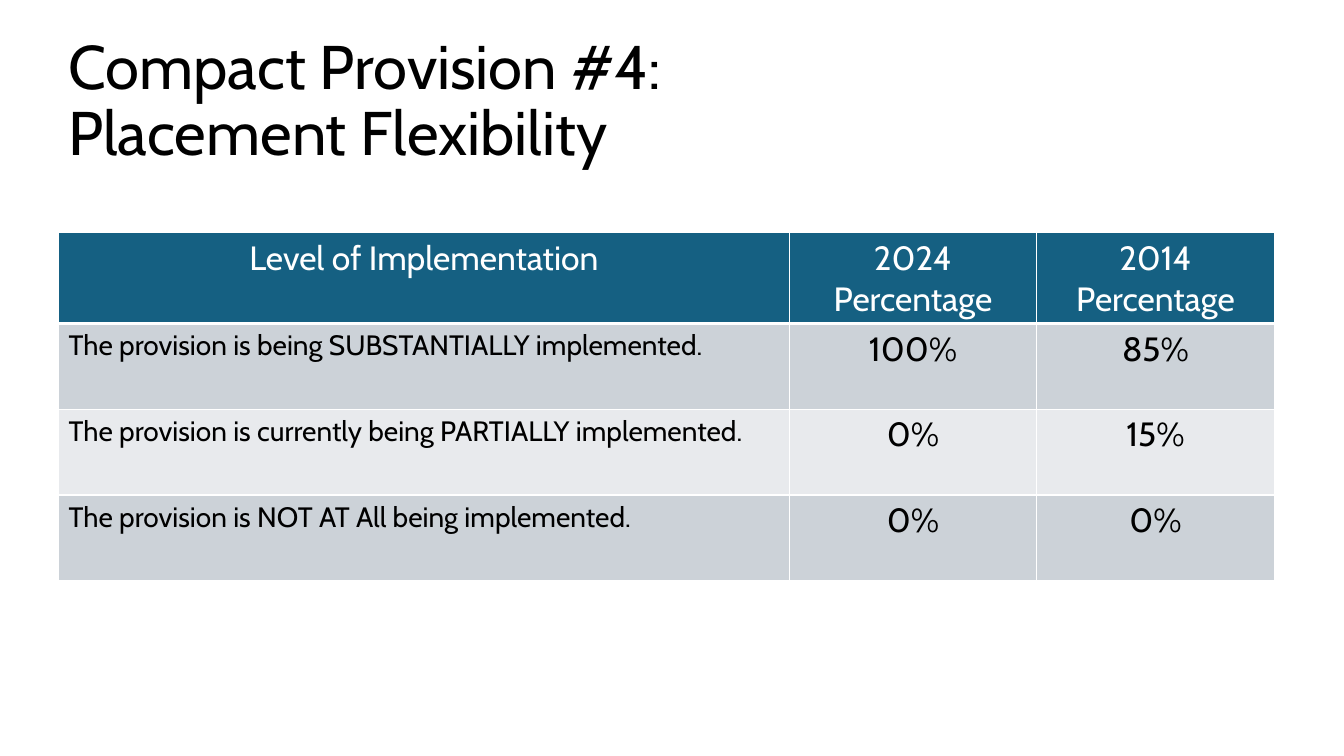
from lxml.etree import SubElement
from pptx import Presentation
from pptx.dml.color import RGBColor
from pptx.enum.text import MSO_ANCHOR, PP_ALIGN
from pptx.oxml.ns import qn
from pptx.util import Inches, Pt

FONT = "Cabin"
COLORS = {
    "text": "000000",
    "header": "156082",
    "odd_row": "CCD2D8",
    "even_row": "E8EAED",
    "white": "FFFFFF",
}
COLUMN_WIDTHS = [7.25, 2.45, 2.36]
ROW_HEIGHTS = [0.9, 0.85, 0.85, 0.85]
LEVELS = [
    ("Level of Implementation", "2024 Percentage", "2014 Percentage"),
    ("The provision is being SUBSTANTIALLY implemented.", "100%", "85%"),
    ("The provision is currently being PARTIALLY implemented.", "0%", "15%"),
    ("The provision is NOT AT All being implemented.", "0%", "0%"),
]


def format_runs(paragraph, size, color):
    for run in paragraph.runs:
        run.font.name = FONT
        run.font.size = Pt(size)
        run.font.bold = False
        run.font.color.rgb = RGBColor.from_string(COLORS[color])


def add_title(slide, text):
    title = slide.shapes.add_textbox(
        Inches(0.58), Inches(0.29), Inches(11.5), Inches(1.45))
    frame = title.text_frame
    frame.word_wrap = True
    frame.vertical_anchor = MSO_ANCHOR.MIDDLE
    heading = frame.paragraphs[0]
    heading.text = text
    heading.line_spacing = 0.9
    format_runs(heading, 44, "text")


def set_borders(cell, bottom_width):
    """Draw white cell borders; they must come before the fill in the XML."""
    properties = cell._tc.get_or_add_tcPr()
    widths = {"a:lnL": 1, "a:lnR": 1, "a:lnT": 1, "a:lnB": bottom_width}
    for side, width in widths.items():
        line = SubElement(properties, qn(side), w=str(Pt(width)))
        fill = SubElement(line, qn("a:solidFill"))
        SubElement(fill, qn("a:srgbClr"), val=COLORS["white"])


def fill_cell(cell, text, row, column):
    is_header = row == 0
    is_label = column == 0 and not is_header
    set_borders(cell, bottom_width=3 if is_header else 1)

    background = "header" if is_header else "odd_row" if row % 2 else "even_row"
    cell.fill.solid()
    cell.fill.fore_color.rgb = RGBColor.from_string(COLORS[background])

    paragraph = cell.text_frame.paragraphs[0]
    paragraph.text = text
    paragraph.alignment = PP_ALIGN.LEFT if is_label else PP_ALIGN.CENTER
    format_runs(paragraph, 20 if is_label else 24,
                "white" if is_header else "text")


def add_levels_table(slide):
    table = slide.shapes.add_table(
        len(LEVELS), len(COLUMN_WIDTHS), Inches(0.58), Inches(2.31),
        Inches(sum(COLUMN_WIDTHS)), Inches(sum(ROW_HEIGHTS))).table
    for column, width in zip(table.columns, COLUMN_WIDTHS):
        column.width = Inches(width)
    for row, height in zip(table.rows, ROW_HEIGHTS):
        row.height = Inches(height)
    for row, texts in enumerate(LEVELS):
        for column, text in enumerate(texts):
            fill_cell(table.cell(row, column), text, row, column)


def main():
    presentation = Presentation()
    presentation.slide_width = Inches(13.33)
    presentation.slide_height = Inches(7.5)
    slide = presentation.slides.add_slide(presentation.slide_layouts[6])

    # Heading
    add_title(slide, "Compact Provision #4: \vPlacement Flexibility")

    # Implementation levels by year
    add_levels_table(slide)

    presentation.save("out.pptx")


if __name__ == "__main__":
    main()
